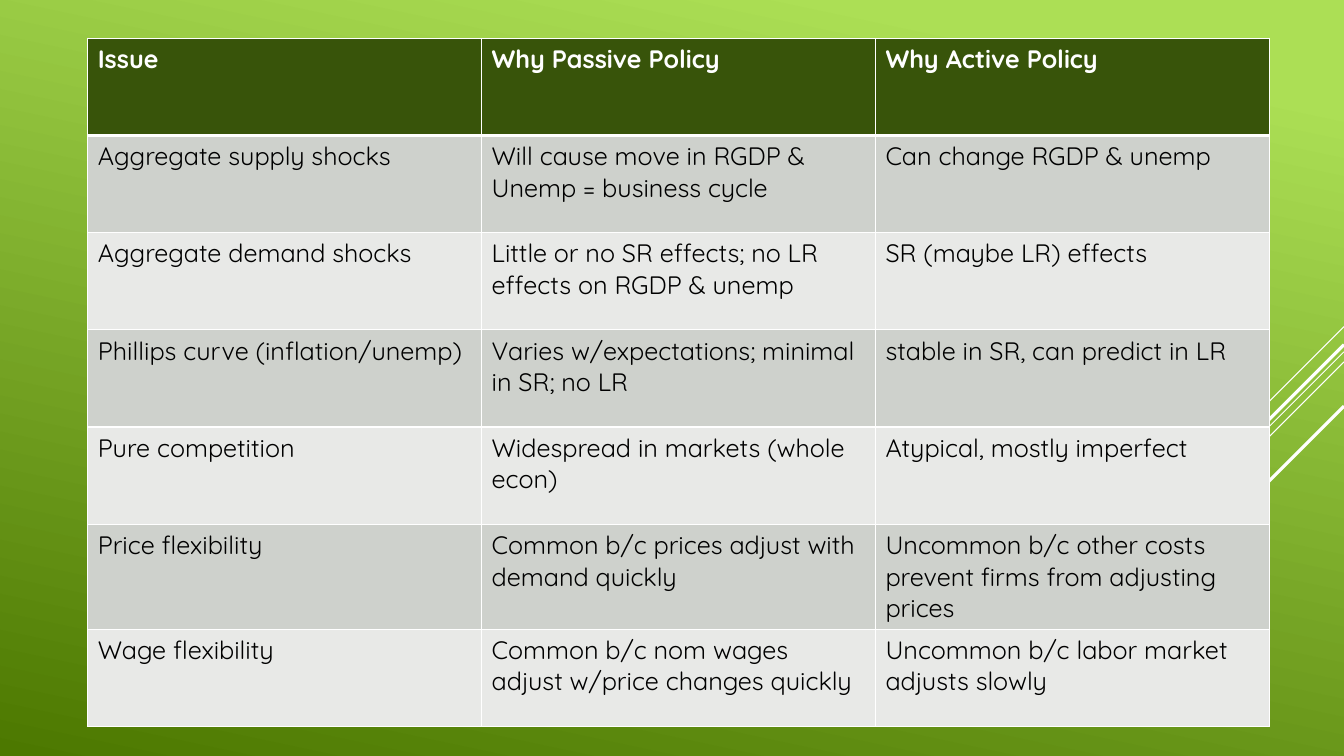
import dataclasses

import lxml.etree
import pptx
import pptx.dml.color
import pptx.enum.shapes
import pptx.oxml
import pptx.oxml.ns
import pptx.presentation
import pptx.slide
import pptx.table
import pptx.util

Inches = pptx.util.Inches
Pt = pptx.util.Pt


@dataclasses.dataclass(frozen=True)
class Theme:
    font: str = "Quicksand"
    text_size: float = 18
    background_light: str = "ACDF55"
    background_dark: str = "4C7800"
    header_fill: str = "38540A"
    band_fills: tuple[str, str] = ("CED1CC", "E8E9E7")
    header_text: str = "FFFFFF"
    body_text: str = "000000"
    line: str = "FFFFFF"
    border_width: float = 1
    header_rule_width: float = 3


@dataclasses.dataclass(frozen=True)
class Ray:
    """A 45-degree line falling leftwards from the right slide edge."""
    top: float
    reach: float
    width: float


@dataclasses.dataclass(frozen=True)
class PolicyRow:
    issue: str
    passive: str
    active: str


THEME = Theme()
SLIDE_WIDTH, SLIDE_HEIGHT = 13.33, 7.5
TABLE_LEFT, TABLE_TOP = 0.87, 0.38
TABLE_WIDTH, TABLE_HEIGHT = 11.72, 6.75

RAYS = [
    Ray(3.24, 1.0, 0.75),
    Ray(3.49, 3.26, 0.75),
    Ray(3.59, 2.07, 0.75),
    Ray(3.42, 1.91, 2.25),
    Ray(4.03, 1.39, 2.25),
]

POLICY_ROWS = [
    PolicyRow("Issue", "Why Passive Policy", "Why Active Policy"),
    PolicyRow("Aggregate supply shocks",
              "Will cause move in RGDP & Unemp = business cycle",
              "Can change RGDP & unemp"),
    PolicyRow("Aggregate demand shocks",
              "Little or no SR effects; no LR effects on RGDP & unemp",
              "SR (maybe LR) effects"),
    PolicyRow("Phillips curve (inflation/unemp)",
              "Varies w/expectations; minimal in SR; no LR",
              "stable in SR, can predict in LR"),
    PolicyRow("Pure competition",
              "Widespread in markets (whole econ)",
              "Atypical, mostly imperfect"),
    PolicyRow("Price flexibility",
              "Common b/c prices adjust with demand quickly",
              "Uncommon b/c other costs prevent firms from adjusting prices"),
    PolicyRow("Wage flexibility",
              "Common b/c nom wages adjust w/price changes quickly",
              "Uncommon b/c labor market adjusts slowly"),
]


def rgb(value: str) -> pptx.dml.color.RGBColor:
    return pptx.dml.color.RGBColor.from_string(value)


def paint_background(slide: pptx.slide.Slide) -> None:
    fill = slide.background.fill
    fill.gradient()
    fill.gradient_angle = 258
    stops = [(0.1, THEME.background_light), (1.0, THEME.background_dark)]
    for stop, (position, color) in zip(fill.gradient_stops, stops):
        stop.position = position
        stop.color.rgb = rgb(color)


def draw_ray(slide: pptx.slide.Slide, ray: Ray) -> None:
    connector = slide.shapes.add_connector(
        pptx.enum.shapes.MSO_CONNECTOR.STRAIGHT,
        Inches(SLIDE_WIDTH), Inches(ray.top),
        Inches(SLIDE_WIDTH - ray.reach), Inches(ray.top + ray.reach))
    connector.line.color.rgb = rgb(THEME.line)
    connector.line.width = Pt(ray.width)
    lxml.etree.SubElement(connector._element.spPr, pptx.oxml.ns.qn("a:effectLst"))


def set_borders(cell: pptx.table._Cell, top: float, bottom: float) -> None:
    """Put the border lines ahead of the cell fill, as the schema requires."""
    properties = cell._tc.get_or_add_tcPr()
    side = THEME.border_width
    widths = {"lnL": side, "lnR": side, "lnT": top, "lnB": bottom}
    for index, (tag, width) in enumerate(widths.items()):
        border = pptx.oxml.parse_xml(
            f'<a:{tag} {pptx.oxml.ns.nsdecls("a")} w="{Pt(width)}">'
            f'<a:solidFill><a:srgbClr val="{THEME.line}"/></a:solidFill></a:{tag}>')
        properties.insert(index, border)


def fill_cell(cell: pptx.table._Cell, text: str, row_index: int) -> None:
    is_header = row_index == 0
    cell.text_frame.text = text
    font = cell.text_frame.paragraphs[0].runs[0].font
    font.name = THEME.font
    font.size = Pt(THEME.text_size)
    font.bold = is_header
    font.color.rgb = rgb(THEME.header_text if is_header else THEME.body_text)
    cell.fill.solid()
    band = THEME.band_fills[(row_index - 1) % 2]
    cell.fill.fore_color.rgb = rgb(THEME.header_fill if is_header else band)
    set_borders(
        cell,
        top=THEME.header_rule_width if row_index == 1 else THEME.border_width,
        bottom=THEME.header_rule_width if is_header else THEME.border_width)


def draw_policy_table(slide: pptx.slide.Slide) -> None:
    column_count = len(dataclasses.fields(PolicyRow))
    table = slide.shapes.add_table(
        len(POLICY_ROWS), column_count, Inches(TABLE_LEFT), Inches(TABLE_TOP),
        Inches(TABLE_WIDTH), Inches(TABLE_HEIGHT)).table
    for row_index, policy in enumerate(POLICY_ROWS):
        for column_index, text in enumerate(dataclasses.astuple(policy)):
            fill_cell(table.cell(row_index, column_index), text, row_index)


def build_presentation() -> pptx.presentation.Presentation:
    presentation = pptx.Presentation()
    presentation.slide_width = Inches(SLIDE_WIDTH)
    presentation.slide_height = Inches(SLIDE_HEIGHT)
    blank_layout = presentation.slide_layouts.get_by_name("Blank")
    slide = presentation.slides.add_slide(blank_layout)
    paint_background(slide)
    for ray in RAYS:
        draw_ray(slide, ray)
    draw_policy_table(slide)
    return presentation


if __name__ == "__main__":
    build_presentation().save("out.pptx")
